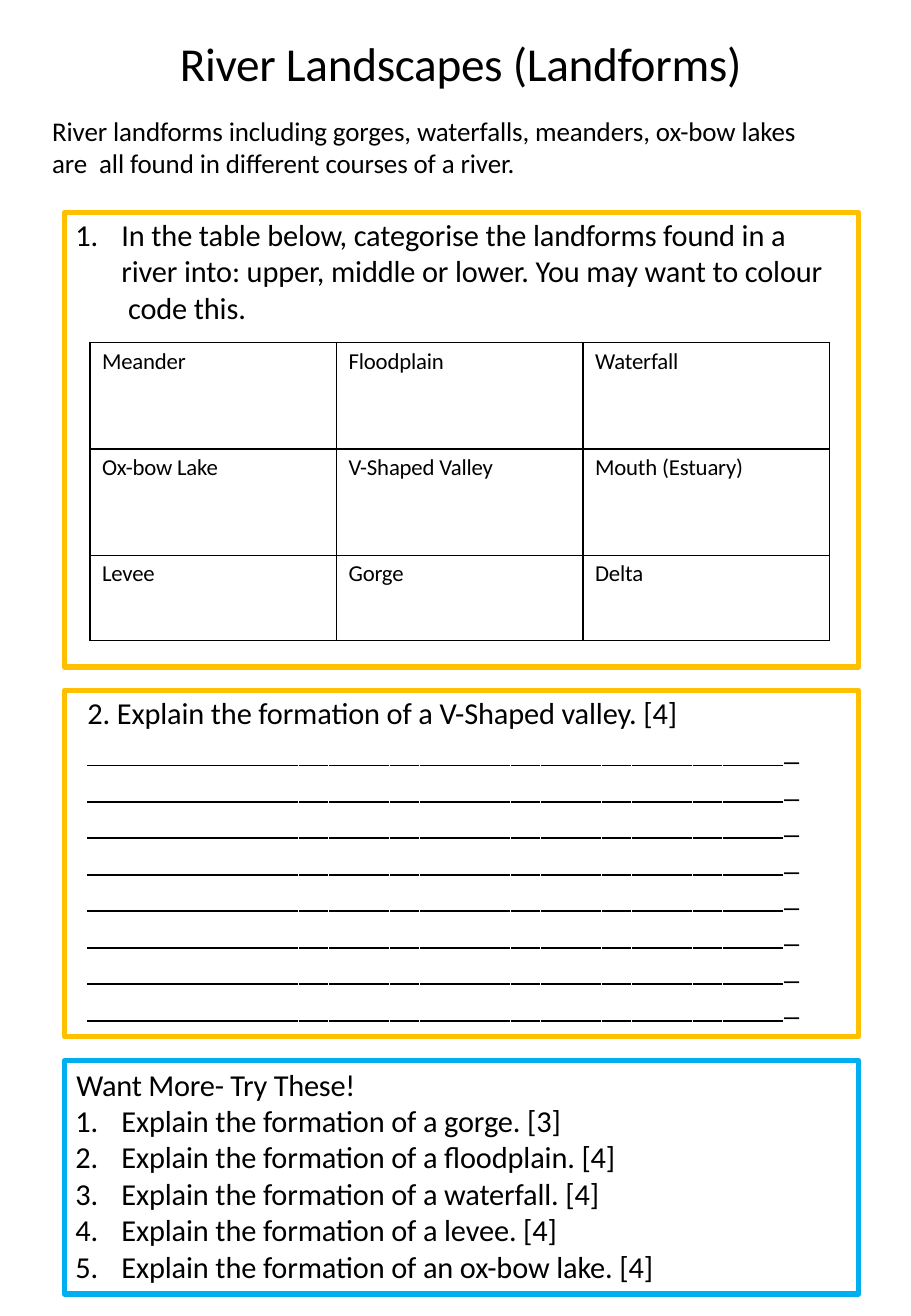
from dataclasses import dataclass

from lxml import etree
from pptx import Presentation
from pptx.dml.color import RGBColor
from pptx.enum.shapes import MSO_SHAPE
from pptx.enum.text import MSO_ANCHOR, PP_ALIGN
from pptx.oxml.ns import qn
from pptx.util import Inches, Pt

RECT = MSO_SHAPE.RECTANGLE
TOP = MSO_ANCHOR.TOP
LEFT, RIGHT = PP_ALIGN.LEFT, PP_ALIGN.RIGHT

FONT = "Calibri"
BLACK, AMBER, BLUE = "000000", "FFC000", "00AFEF"
CELL = 0.1  # side of a grid square, in inches
PANEL_COL, PANEL_COLS = 5.3, 65.4


@dataclass
class Para:
    text: str
    size: float = 18
    before: float = 0
    indent: float = 0
    hanging: float = 0
    numbered: bool = False
    align: PP_ALIGN = LEFT
    spacing: int = -8  # hundredths of a point


@dataclass
class Panel:
    row: float
    rows: float
    color: str
    paras: list[Para]
    inset_top: float = 0.3
    inset_right: float = 0


def grid(n: float) -> int:
    """Length of n grid squares."""
    return Inches(n * CELL)


def rgb(color: str) -> RGBColor:
    return RGBColor.from_string(color)


def write(tf, paras: list[Para], inset_top: float = 0.1, inset_right: float = 0) -> None:
    """Fill a text frame with formatted paragraphs."""
    tf.word_wrap = True
    tf.vertical_anchor = TOP
    tf.margin_left = tf.margin_bottom = 0
    tf.margin_top, tf.margin_right = grid(inset_top), grid(inset_right)
    for i, para in enumerate(paras):
        p = tf.paragraphs[0] if i == 0 else tf.add_paragraph()
        p.text = para.text
        p.alignment = para.align
        p.space_before = Pt(para.before)
        p.line_spacing = 1.0
        p.font.name, p.font.size = FONT, Pt(para.size)
        p.font.color.rgb = rgb(BLACK)
        pPr = p._p.get_or_add_pPr()
        pPr.set("marL", str(grid(para.indent)))
        pPr.set("indent", str(-grid(para.hanging)))
        pPr.get_or_add_defRPr().set("spc", str(para.spacing))
        bullet = etree.Element(qn("a:buAutoNum" if para.numbered else "a:buNone"))
        if para.numbered:
            bullet.set("type", "arabicPeriod")
        pPr.defRPr.addprevious(bullet)


def add_panel(shapes, panel: Panel) -> None:
    """Outlined box across the page."""
    s = shapes.add_shape(RECT, grid(PANEL_COL), grid(panel.row),
                         grid(PANEL_COLS), grid(panel.rows))
    s.shadow.inherit = False
    s.fill.background()
    s.line.color.rgb = rgb(panel.color)
    s.line.width = Pt(3.12)
    if panel.paras:
        write(s.text_frame, panel.paras, panel.inset_top, panel.inset_right)


def add_answer_line(shapes, row: float) -> None:
    """Writing line: one long stroke, then short ones with hairline gaps."""
    first, split, last, count = 7.2, 19.6, 64.5, 18
    pitch = (last - split) / count
    strokes = [(first, split)]
    strokes += [(split + i * pitch, split + (i + 0.98) * pitch) for i in range(count)]
    y = grid(row)
    builder = shapes.build_freeform(grid(first), y)
    for start, end in strokes:
        if start != first:
            builder.move_to(grid(start), y)
        builder.add_line_segments([(grid(end), y)], close=False)
    s = builder.convert_to_shape()
    s.shadow.inherit = False
    s.fill.background()
    s.line.color.rgb = rgb(BLACK)
    s.line.width = Pt(1.17)


def set_borders(cell) -> None:
    """Thin black line on all four sides of a table cell."""
    tcPr = cell._tc.get_or_add_tcPr()
    for i, side in enumerate(("lnL", "lnR", "lnT", "lnB")):
        ln = etree.Element(qn(f"a:{side}"), w=str(Pt(1)))
        fill = etree.SubElement(ln, qn("a:solidFill"))
        etree.SubElement(fill, qn("a:srgbClr"), val=BLACK)
        tcPr.insert(i, ln)


def add_landform_table(shapes, names: list[list[str]], heights: list[float]) -> None:
    width = 20.3
    table = shapes.add_table(len(names), len(names[0]), grid(7.4), grid(28.2),
                             grid(width * len(names[0])), grid(sum(heights))).table
    table.first_row = table.horz_banding = False
    for column in table.columns:
        column.width = grid(width)
    for r, (row_names, height) in enumerate(zip(names, heights)):
        table.rows[r].height = grid(height)
        for c, name in enumerate(row_names):
            cell = table.cell(r, c)
            cell.fill.background()
            set_borders(cell)
            write(cell.text_frame, [Para(name, 13.5, before=2.9, indent=1)])
            cell.margin_left = cell.margin_right = cell.margin_bottom = 0
            cell.margin_top = grid(0.4)
            cell.vertical_anchor = TOP


INTRO = [
    Para("River landforms including gorges, waterfalls, meanders, ox-bow lakes are  all "
         "found in different courses of a river.", 16, before=1.1, indent=0.1, spacing=-5),
    Para("In the table below, categorise the landforms found in a \v"
         "river into: upper, middle or lower. You may want to colour\v code this.",
         before=22, indent=5.8, hanging=3.8, numbered=True),
]
LANDFORMS = [
    ["Meander", "Floodplain", "Waterfall"],
    ["Ox-bow Lake", "V-Shaped Valley", "Mouth (Estuary)"],
    ["Levee", "Gorge", "Delta"],
]
ANSWER_LINES = 8
EXTRA = ["a gorge. [3]", "a floodplain. [4]", "a waterfall. [4]",
         "a levee. [4]", "an ox-bow lake. [4]"]

TABLE_PANEL = Panel(17.5, 37.4, AMBER, [])
VALLEY_PANEL = Panel(
    56.8, 28.5, AMBER,
    [Para("2. Explain the formation of a V-Shaped valley. [4]", before=2.4, indent=1.9)]
    + [Para("_", align=RIGHT, spacing=0) for _ in range(ANSWER_LINES)],
    inset_right=4.9)
EXTRA_PANEL = Panel(
    87.3, 19.2, BLUE,
    [Para("Want More- Try These!", before=2.5, indent=1, spacing=-15)]
    + [Para(f"Explain the formation of {item}", indent=4.7, hanging=3.8, numbered=True)
       for item in EXTRA],
    inset_top=0.4)


def main() -> None:
    prs = Presentation()
    prs.slide_width, prs.slide_height = Inches(7.5), Inches(10.83)
    slide = prs.slides.add_slide(prs.slide_layouts[5])
    shapes = slide.shapes

    # Title
    title = shapes.title
    title.left, title.top = grid(13.7), grid(2.7)
    title.width, title.height = grid(48.2), grid(4.9)
    write(title.text_frame, [Para("River Landscapes (Landforms)", 28, before=1.1,
                                  indent=1.1, spacing=-17)])

    # Introduction and first question
    add_panel(shapes, TABLE_PANEL)
    intro = shapes.add_textbox(grid(4.2), grid(9.3), grid(64), grid(17.7))
    write(intro.text_frame, INTRO)
    add_landform_table(shapes, LANDFORMS, [8.75, 8.75, 7])

    # Second question with writing lines
    for i in range(ANSWER_LINES):
        add_answer_line(shapes, 63 + 3 * i)
    add_panel(shapes, VALLEY_PANEL)

    # Further questions
    add_panel(shapes, EXTRA_PANEL)

    prs.save("out.pptx")


if __name__ == "__main__":
    main()
